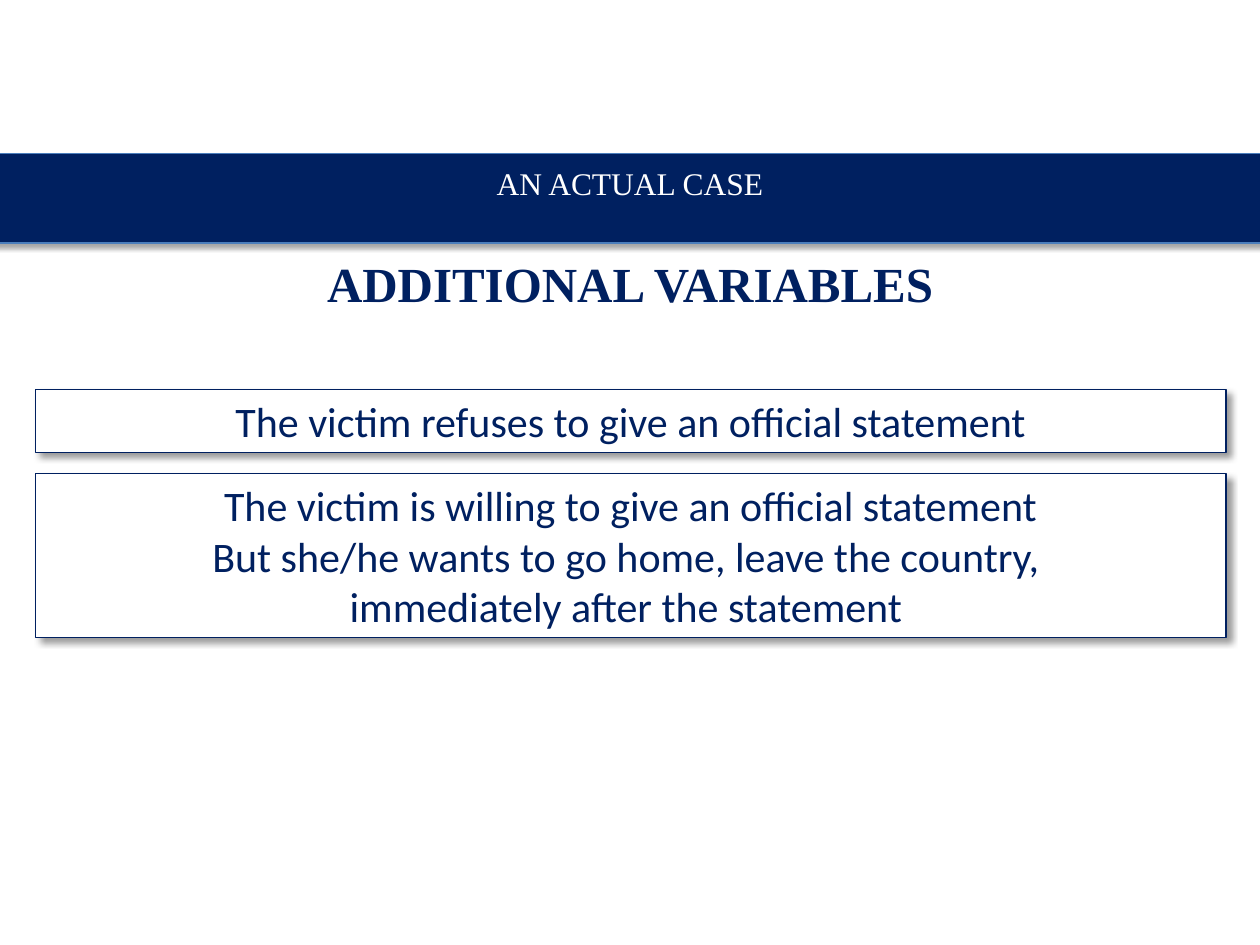
"""Build the "Additional variables" slide of an actual case."""
from lxml.etree import SubElement
from pptx import Presentation
from pptx.dml.color import RGBColor
from pptx.enum.shapes import MSO_SHAPE
from pptx.enum.text import MSO_ANCHOR, MSO_AUTO_SIZE, PP_ALIGN
from pptx.oxml.ns import qn
from pptx.util import Inches, Pt

NAVY = RGBColor(0x00, 0x20, 0x60)
BLUE = RGBColor(0x4B, 0x7E, 0xBC)
WHITE = RGBColor(0xFF, 0xFF, 0xFF)

BANNER = "AN ACTUAL CASE"
TITLE = "ADDITIONAL VARIABLES"
VARIABLES = [
    ["The victim refuses to give an official statement"],
    [
        "The victim is willing to give an official statement",
        "But she/he wants to go home, leave the country, ",
        "immediately after the statement ",
    ],
]

BANNER_FONT = {"name": "Times New Roman", "size": Pt(18), "bold": False}
TITLE_FONT = {"name": "Times New Roman", "size": Pt(28), "bold": True}
BODY_FONT = {"name": "Calibri", "size": Pt(24), "bold": False}
BAND_SHADOW = {"alpha": 35, "blur": 3.1, "distance": 1.8, "angle": 90}
CARD_SHADOW = {"alpha": 40, "blur": 4, "distance": 3, "angle": 45}

CARD_LEFT, CARD_TOP, CARD_WIDTH = 0.28, 3.09, 9.45
CARD_GAP, LINE_HEIGHT, CARD_PADDING = 0.17, 0.4, 0.1


def place(shape, left, top, width, height):
    shape.left, shape.top = Inches(left), Inches(top)
    shape.width, shape.height = Inches(width), Inches(height)


def write(shape, lines, font, color):
    frame = shape.text_frame
    frame.word_wrap = True
    frame.auto_size = MSO_AUTO_SIZE.SHAPE_TO_FIT_TEXT
    frame.vertical_anchor = MSO_ANCHOR.TOP
    for index, line in enumerate(lines):
        para = frame.add_paragraph() if index else frame.paragraphs[0]
        para.alignment = PP_ALIGN.CENTER
        span = para.add_run()
        span.text = line
        for key, value in font.items():
            setattr(span.font, key, value)
        span.font.color.rgb = color


def cast_shadow(shape, alpha, blur, distance, angle):
    shape.shadow.inherit = False
    effects = shape.element.spPr.find(qn("a:effectLst"))
    outer = SubElement(
        effects, qn("a:outerShdw"), blurRad=str(Pt(blur)), dist=str(Pt(distance)),
        dir=str(angle * 60000), algn="tl", rotWithShape="0")
    tint = SubElement(outer, qn("a:srgbClr"), val="000000")
    SubElement(tint, qn("a:alpha"), val=str(alpha * 1000))


def add_panel(page, area, fill, line, shadow):
    panel = page.shapes.add_shape(MSO_SHAPE.RECTANGLE, *map(Inches, area))
    panel.fill.solid()
    panel.fill.fore_color.rgb = fill
    panel.line.color.rgb = line
    panel.line.width = Pt(0.75)
    cast_shadow(panel, **shadow)
    return panel


def main():
    deck = Presentation()
    deck.slide_width, deck.slide_height = Inches(10), Inches(7.5)
    page = deck.slides.add_slide(deck.slide_layouts[5])

    add_panel(page, (-0.1, 1.22, 10.17, 0.71), NAVY, BLUE, BAND_SHADOW)
    banner = page.shapes.add_textbox(*map(Inches, (0.41, 1.25, 9.18, 0.4)))
    write(banner, [BANNER], BANNER_FONT, WHITE)

    title = page.shapes.title
    place(title, 0.41, 1.96, 9.18, 0.57)
    write(title, [TITLE], TITLE_FONT, NAVY)

    top = CARD_TOP
    for lines in VARIABLES:
        height = LINE_HEIGHT * len(lines) + CARD_PADDING
        area = (CARD_LEFT, top, CARD_WIDTH, height)
        card = add_panel(page, area, WHITE, NAVY, CARD_SHADOW)
        write(card, lines, BODY_FONT, NAVY)
        top += height + CARD_GAP

    deck.save("out.pptx")


if __name__ == "__main__":
    main()
